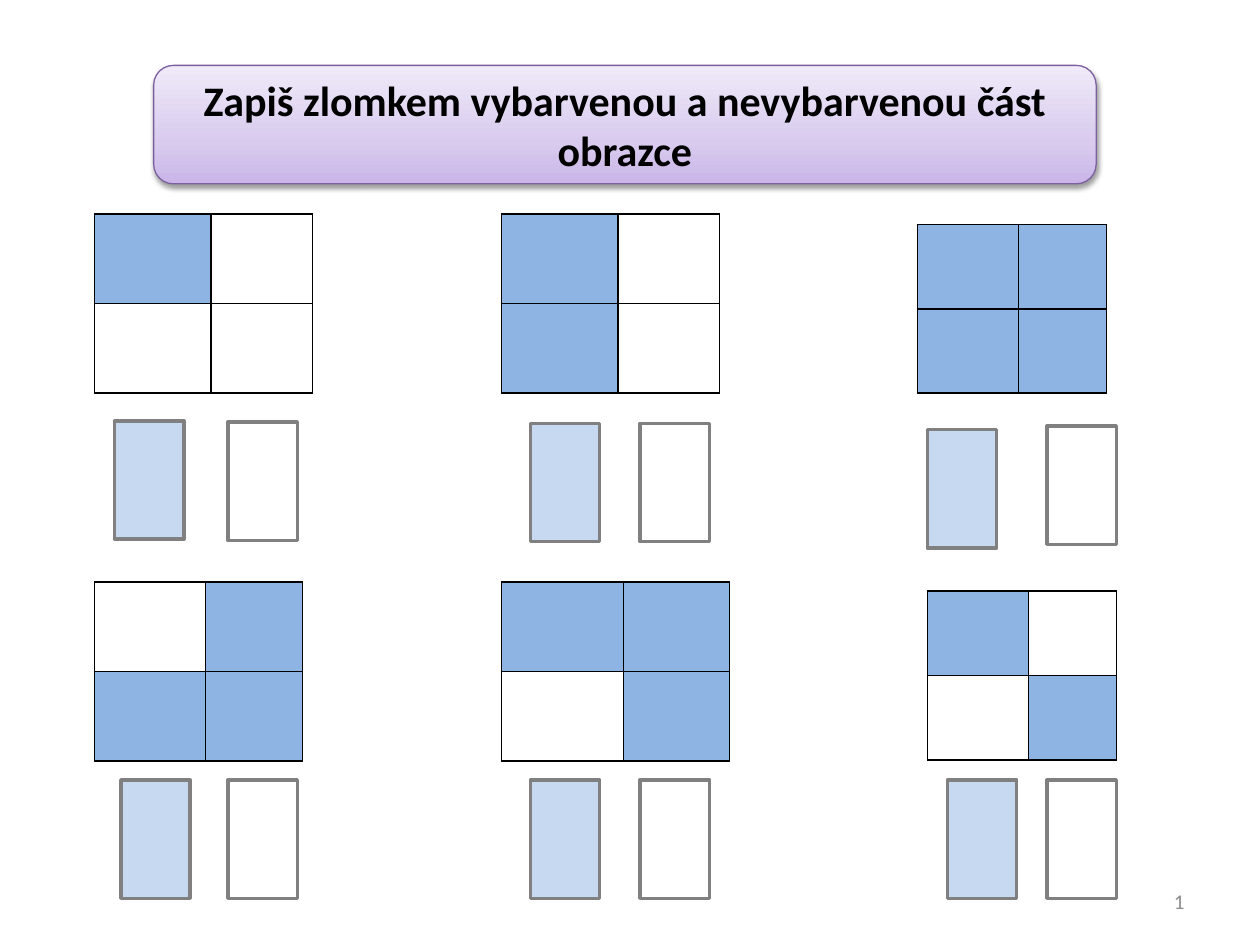
"""Build a worksheet slide on writing the shaded and unshaded parts as fractions."""
from pptx import Presentation
from pptx.dml.color import RGBColor
from pptx.enum.shapes import MSO_SHAPE
from pptx.enum.text import MSO_ANCHOR, PP_ALIGN
from pptx.oxml import parse_xml
from pptx.oxml.ns import nsdecls, qn
from pptx.util import Pt

RECTANGLE = MSO_SHAPE.RECTANGLE
ROUNDED = MSO_SHAPE.ROUNDED_RECTANGLE
MIDDLE = MSO_ANCHOR.MIDDLE
CENTER, RIGHT = PP_ALIGN.CENTER, PP_ALIGN.RIGHT
BLACK, SHADED, ANSWER, GREY = "000000", "8EB4E3", "C6D9F1", "808080"
LEFT_SHARE = 0.535
BOX_WIDTH, BOX_HEIGHT = 39.6, 67.7


def color(value):
    """Turn a hex string into a colour."""
    return RGBColor.from_string(value)


def write(shape, text, size, ink, alignment, bold=False):
    """Put one formatted paragraph into a shape."""
    frame = shape.text_frame
    frame.word_wrap = True
    frame.vertical_anchor = MIDDLE
    frame.text = text
    para = frame.paragraphs[0]
    para.alignment = alignment
    span = para.runs[0]
    span.font.name = "Calibri"
    span.font.size = Pt(size)
    span.font.bold = bold
    span.font.color.rgb = color(ink)


deck = Presentation()
deck.slide_width, deck.slide_height = Pt(720), Pt(540)
page = deck.slides.add_slide(deck.slide_layouts[5])
shapes = page.shapes

banner_place = Pt(87.8), Pt(37.4), Pt(538.6), Pt(67.7)
banner = shapes.add_shape(ROUNDED, *banner_place)
banner.line.color.rgb = color("7D60A0")
banner.line.width = Pt(0.75)
stops = "".join(
    f'<a:gs pos="{position * 1000}"><a:srgbClr val="{tint}"/></a:gs>'
    for position, tint in [(0, "C9B5E8"), (35, "D8CBEE"), (100, "F0EAF9")]
)
properties = banner._element.spPr
properties.find(qn("a:ln")).addprevious(parse_xml(
    f'<a:gradFill {nsdecls("a")} rotWithShape="1"><a:gsLst>{stops}</a:gsLst>'
    '<a:lin ang="16200000" scaled="0"/></a:gradFill>'
))
properties.append(parse_xml(
    f'<a:effectLst {nsdecls("a")}><a:outerShdw blurRad="{Pt(3.1)}" dist="{Pt(1.6)}" '
    'dir="5400000" rotWithShape="0"><a:srgbClr val="000000"><a:alpha val="38000"/>'
    '</a:srgbClr></a:outerShdw></a:effectLst>'
))

title = shapes.title
title.left, title.top, title.width, title.height = banner_place
write(title, "Zapiš zlomkem vybarvenou a nevybarvenou část obrazce", 24, BLACK, CENTER, True)
shapes._spTree.append(title._element)

figures = [
    (54, 122.4, 124.6, 102.2, "10", "00"),
    (286.6, 122.4, 124.6, 102.2, "10", "10"),
    (524.2, 128.2, 108, 96.5, "11", "11"),
    (54, 332.6, 118.8, 102.2, "01", "11"),
    (286.6, 332.6, 130.3, 102.2, "11", "01"),
    (529.9, 337.7, 108, 96.5, "10", "01"),
]
for left, top, width, height, *pattern in figures:
    table = shapes.add_table(2, 2, Pt(left), Pt(top), Pt(width), Pt(height)).table
    table.first_row = table.horz_banding = False
    for column, share in zip(table.columns, (LEFT_SHARE, 1 - LEFT_SHARE)):
        column.width = Pt(width * share)
    for row, marks in zip(table.rows, pattern):
        row.height = Pt(height / 2)
        for cell, mark in zip(row.cells, marks):
            for side in ("lnL", "lnR", "lnT", "lnB"):
                cell._tc.get_or_add_tcPr().append(parse_xml(
                    f'<a:{side} {nsdecls("a")} w="{Pt(1)}"><a:solidFill>'
                    f'<a:srgbClr val="{BLACK}"/></a:solidFill></a:{side}>'
                ))
            if mark == "1":
                cell.fill.solid()
                cell.fill.fore_color.rgb = color(SHADED)
            else:
                cell.fill.background()

answer_pairs = [
    ((65.5, 240.5), (130.3, 241.2)),
    ((303.1, 241.9), (365.8, 241.9)),
    ((529.9, 245.5), (598.3, 243.4)),
    ((69.1, 445.7), (130.3, 445.7)),
    ((303.1, 445.7), (365.8, 445.7)),
    ((541.4, 445.7), (598.3, 445.7)),
]
for pair in answer_pairs:
    for (left, top), tint in zip(pair, (ANSWER, None)):
        box = shapes.add_shape(RECTANGLE, Pt(left), Pt(top), Pt(BOX_WIDTH), Pt(BOX_HEIGHT))
        box.shadow.inherit = False
        box.line.color.rgb = color(GREY)
        box.line.width = Pt(2)
        if tint:
            box.fill.solid()
            box.fill.fore_color.rgb = color(tint)
        else:
            box.fill.background()

page_number = shapes.add_textbox(Pt(516.2), Pt(500.4), Pt(167.8), Pt(28.8))
write(page_number, "1", 12, "8C8C8C", RIGHT)

deck.save("out.pptx")
